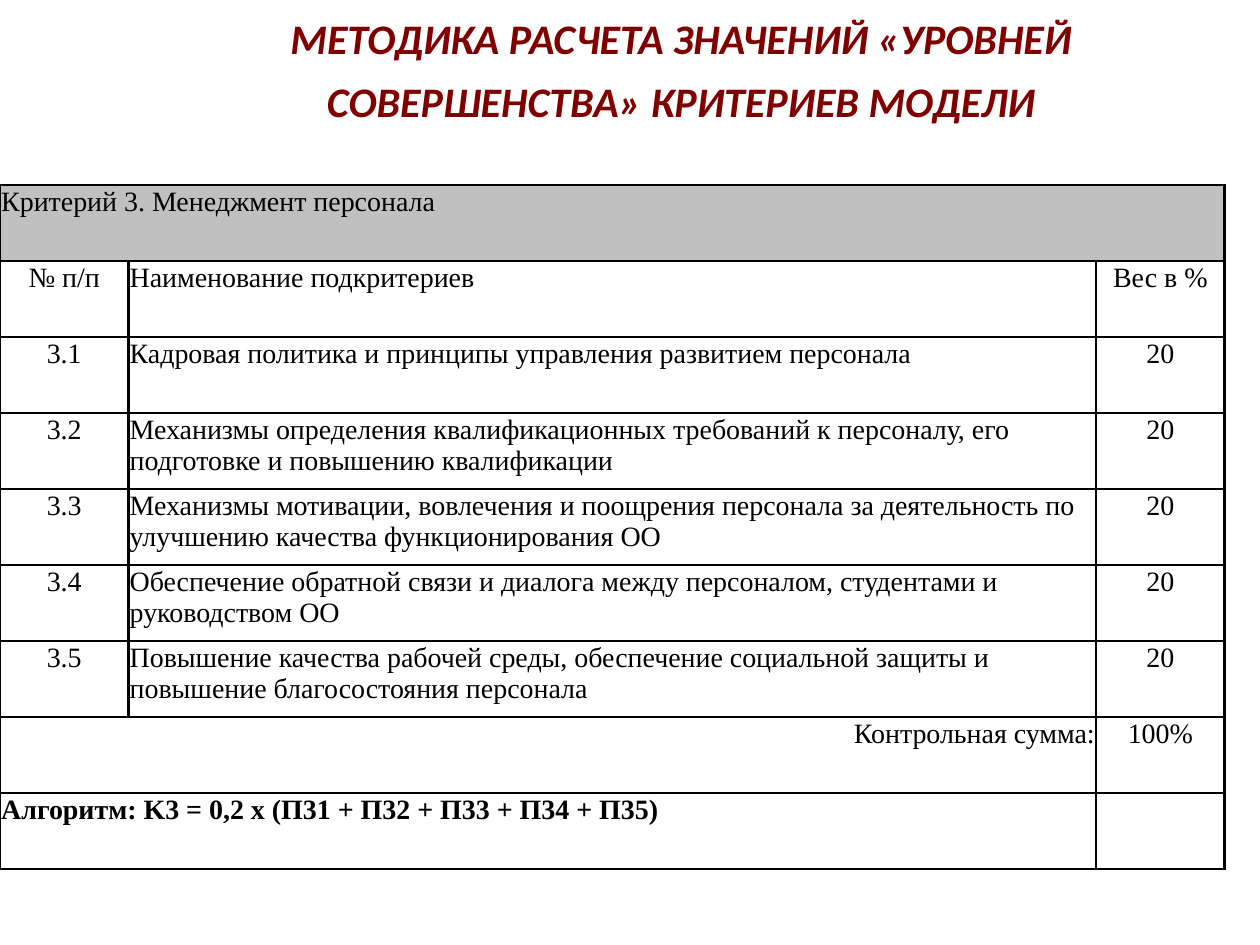
from lxml import etree
from pptx import Presentation
from pptx.dml.color import RGBColor
from pptx.enum.text import MSO_ANCHOR, PP_ALIGN
from pptx.oxml.ns import qn
from pptx.util import Inches, Pt

LEFT, CENTER, RIGHT = PP_ALIGN.LEFT, PP_ALIGN.CENTER, PP_ALIGN.RIGHT
TOP = MSO_ANCHOR.TOP

TITLE = "МЕТОДИКА РАСЧЕТА ЗНАЧЕНИЙ «УРОВНЕЙ СОВЕРШЕНСТВА» КРИТЕРИЕВ МОДЕЛИ"
ROWS = [
    ("Критерий 3. Менеджмент персонала", "", ""),
    ("№ п/п", "Наименование подкритериев", "Вес в %"),
    ("3.1", "Кадровая политика и принципы управления развитием персонала", "20"),
    ("3.2", "Механизмы определения квалификационных требований к персоналу, "
            "его подготовке и повышению квалификации", "20"),
    ("3.3", "Механизмы мотивации, вовлечения и поощрения персонала за деятельность "
            "по улучшению качества функционирования ОО", "20"),
    ("3.4", "Обеспечение обратной связи и диалога между персоналом, студентами "
            "и руководством ОО", "20"),
    ("3.5", "Повышение качества рабочей среды, обеспечение социальной защиты "
            "и повышение благосостояния персонала", "20"),
    ("Контрольная сумма:", "", "100%"),
    ("Алгоритм: K3 = 0,2 х (П31 + П32 + П33 + П34 + П35)", "", ""),
]
COLUMN_WIDTHS = (1.02, 7.68, 1.02)
COLUMN_ALIGNS = (CENTER, LEFT, CENTER)
TABLE_TOP, TABLE_HEIGHT = 1.47, 5.43
LAST = len(ROWS) - 1
MERGED_TO = {0: 2, LAST - 1: 1, LAST: 1}
FIRST_ALIGNS = {0: LEFT, LAST - 1: RIGHT, LAST: LEFT}


def color(value):
    return RGBColor.from_string(value)


def style_font(font, name, size, value, bold=False, italic=False):
    font.name, font.size = name, Pt(size)
    font.bold, font.italic = bold, italic
    font.color.rgb = color(value)


def add_borders(cell, widths):
    properties = cell._tc.get_or_add_tcPr()
    for index, (side, width) in enumerate(widths.items()):
        line = etree.Element(qn("a:" + side), w=str(Pt(width)))
        fill = etree.SubElement(line, qn("a:solidFill"))
        etree.SubElement(fill, qn("a:srgbClr"), val="000000")
        properties.insert(index, line)


def add_title(page):
    box = page.shapes.add_textbox(Inches(1.53), 0, Inches(7.75), Inches(1.58))
    frame = box.text_frame
    frame.word_wrap = True
    frame.vertical_anchor = TOP
    frame.margin_top = 0
    frame.text = TITLE
    para = frame.paragraphs[0]
    para.alignment = CENTER
    para.line_spacing = Pt(36)
    style_font(para.runs[0].font, "Calibri", 24, "800000", True, True)


def add_criteria_table(page):
    table = page.shapes.add_table(
        len(ROWS), len(COLUMN_WIDTHS), 0, Inches(TABLE_TOP),
        Inches(sum(COLUMN_WIDTHS)), Inches(TABLE_HEIGHT)).table
    for column, width in zip(table.columns, COLUMN_WIDTHS):
        column.width = Inches(width)
    for row_index, texts in enumerate(ROWS):
        table.rows[row_index].height = Inches(TABLE_HEIGHT / len(ROWS))
        borders = {
            "lnL": 1.5, "lnR": 1.5,
            "lnT": 1.5 if row_index < 2 else 1,
            "lnB": 1.5 if row_index in (0, LAST) else 1,
        }
        for column_index, text in enumerate(texts):
            cell = table.cell(row_index, column_index)
            cell.margin_left = cell.margin_right = cell.margin_top = Inches(0.01)
            cell.margin_bottom = 0
            cell.vertical_anchor = TOP
            cell.fill.solid()
            cell.fill.fore_color.rgb = color("C0C0C0" if row_index == 0 else "FFFFFF")
            add_borders(cell, borders)
            cell.text_frame.text = text
            para = cell.text_frame.paragraphs[0]
            para.alignment = COLUMN_ALIGNS[column_index]
            if column_index == 0:
                para.alignment = FIRST_ALIGNS.get(row_index, CENTER)
            for font in [para.font] + [span.font for span in para.runs]:
                style_font(font, "Times New Roman", 16, "000000", row_index == LAST)
    for row_index, end in MERGED_TO.items():
        table.cell(row_index, 0).merge(table.cell(row_index, end))


def main():
    deck = Presentation()
    deck.slide_width, deck.slide_height = Inches(10), Inches(7.5)
    page = deck.slides.add_slide(deck.slide_layouts[6])
    add_title(page)
    add_criteria_table(page)
    deck.save("out.pptx")


if __name__ == "__main__":
    main()
